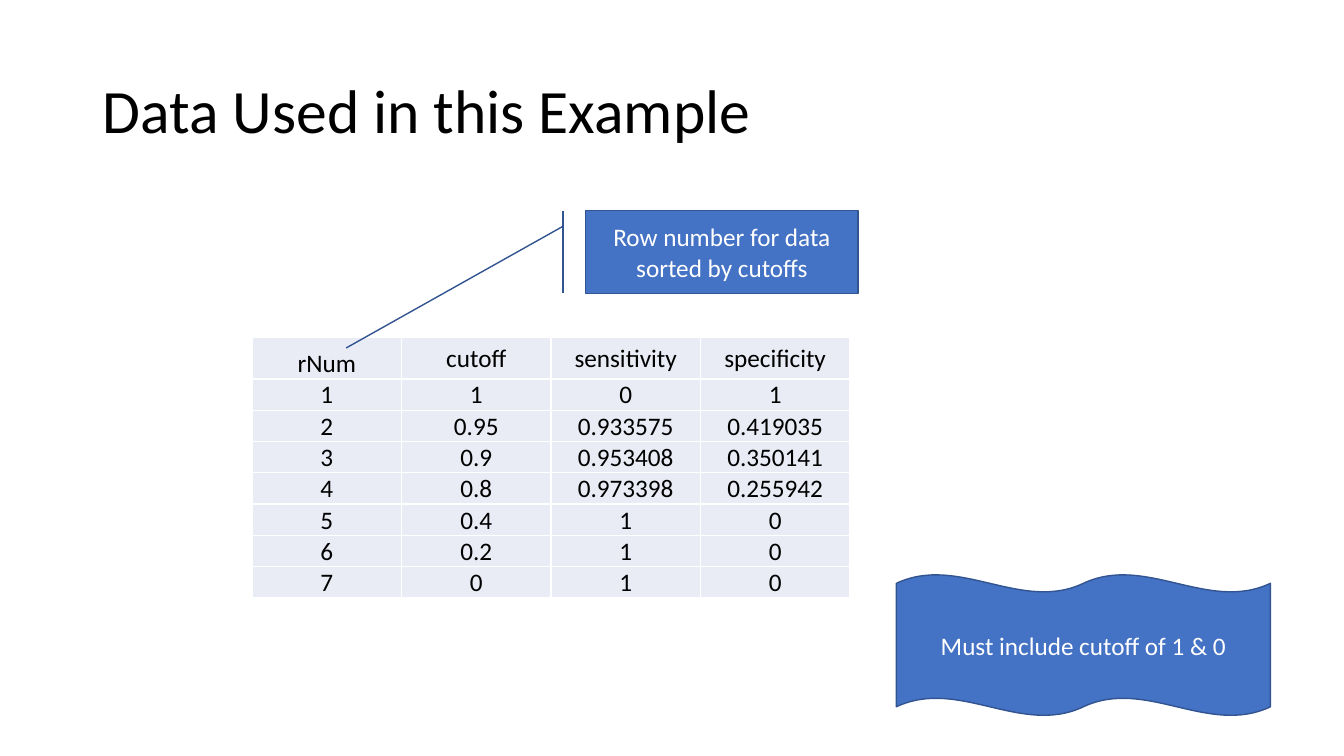
import dataclasses

import lxml.etree
import pptx
import pptx.dml.color
import pptx.enum.shapes
import pptx.enum.text
import pptx.oxml.ns
import pptx.shapes.autoshape
import pptx.slide
import pptx.table
import pptx.text.text
import pptx.util

Inches = pptx.util.Inches
Pt = pptx.util.Pt
RGBColor = pptx.dml.color.RGBColor
Kind = pptx.enum.shapes.MSO_SHAPE
Align = pptx.enum.text.PP_ALIGN
Anchor = pptx.enum.text.MSO_ANCHOR

BLACK = RGBColor(0x00, 0x00, 0x00)
WHITE = RGBColor(0xFF, 0xFF, 0xFF)
BLUE = RGBColor(0x44, 0x72, 0xC4)
NAVY = RGBColor(0x32, 0x54, 0x91)
PALE = RGBColor(0xE9, 0xEB, 0xF5)
FONT = "Calibri"

ROWS = [
    ("rNum", "cutoff", "sensitivity", "specificity"),
    ("1", "1", "0", "1"),
    ("2", "0.95", "0.933575", "0.419035"),
    ("3", "0.9", "0.953408", "0.350141"),
    ("4", "0.8", "0.973398", "0.255942"),
    ("5", "0.4", "1", "0"),
    ("6", "0.2", "1", "0"),
    ("7", "0", "1", "0"),
]


@dataclasses.dataclass(frozen=True)
class Note:
    kind: Kind
    left: float
    top: float
    width: float
    height: float
    text: str
    adjust: tuple[float, ...] = ()


NOTES = [
    Note(Kind.LINE_CALLOUT_1_BORDER_AND_ACCENT_BAR, 5.81, 2.09, 2.7, 0.82,
         "Row number for data sorted by cutoffs", (0.188, -0.083, 1.661, -0.88)),
    Note(Kind.DOUBLE_WAVE, 8.89, 5.7, 3.71, 1.4, "Must include cutoff of 1 & 0"),
]


def write(frame: pptx.text.text.TextFrame, text: str, *, size: float = 18,
          color: RGBColor = BLACK, align: Align = Align.CENTER,
          space: float = 1.0) -> None:
    frame.word_wrap = True
    line = frame.paragraphs[0]
    line.alignment = align
    line.line_spacing = space
    run = line.add_run()
    run.text = text
    run.font.name = FONT
    run.font.size = Pt(size)
    run.font.color.rgb = color


def edge(cell: pptx.table._Cell, color: RGBColor) -> None:
    """Put a one-point border on all four sides."""
    props = cell._tc.get_or_add_tcPr()
    qn = pptx.oxml.ns.qn
    for place, side in enumerate(("lnL", "lnR", "lnT", "lnB")):
        line = lxml.etree.Element(qn(f"a:{side}"), w=str(Pt(1)))
        fill = lxml.etree.SubElement(line, qn("a:solidFill"))
        lxml.etree.SubElement(fill, qn("a:srgbClr"), val=str(color))
        props.insert(place, line)


def title(slide: pptx.slide.Slide, text: str) -> None:
    box = slide.shapes.add_textbox(Inches(0.92), Inches(0.4), Inches(11.5), Inches(1.45))
    box.text_frame.vertical_anchor = Anchor.MIDDLE
    write(box.text_frame, text, size=44, align=Align.LEFT, space=0.9)


def grid(slide: pptx.slide.Slide, rows: list[tuple[str, ...]]) -> None:
    table = slide.shapes.add_table(len(rows), len(rows[0]), Inches(2.5), Inches(3.35),
                                   Inches(5.93), Inches(2.58)).table
    table.first_row = table.horz_banding = False
    for r, row in enumerate(rows):
        table.rows[r].height = Inches(0.31 if r else 0.41)
        for c, text in enumerate(row):
            cell = table.cell(r, c)
            cell.margin_left = cell.margin_right = cell.margin_top = Inches(0.01)
            cell.margin_bottom = 0
            cell.vertical_anchor = Anchor.MIDDLE if c else Anchor.BOTTOM
            cell.fill.solid()
            cell.fill.fore_color.rgb = PALE
            edge(cell, WHITE)
            write(cell.text_frame, text)


def draw(slide: pptx.slide.Slide, note: Note) -> None:
    shape = slide.shapes.add_shape(note.kind, Inches(note.left), Inches(note.top),
                                   Inches(note.width), Inches(note.height))
    for i, value in enumerate(note.adjust):
        shape.adjustments[i] = value
    shape.shadow.inherit = False
    shape.fill.solid()
    shape.fill.fore_color.rgb = BLUE
    shape.line.color.rgb = NAVY
    shape.line.width = Pt(1)
    shape.text_frame.vertical_anchor = Anchor.MIDDLE
    write(shape.text_frame, note.text, color=WHITE)


def main() -> None:
    deck = pptx.Presentation()
    deck.slide_width, deck.slide_height = Inches(13.33), Inches(7.5)
    slide = deck.slides.add_slide(deck.slide_layouts[6])

    # Heading and data
    title(slide, "Data Used in this Example")
    grid(slide, ROWS)

    # Remarks on the data
    for note in NOTES:
        draw(slide, note)

    deck.save("out.pptx")


if __name__ == "__main__":
    main()
